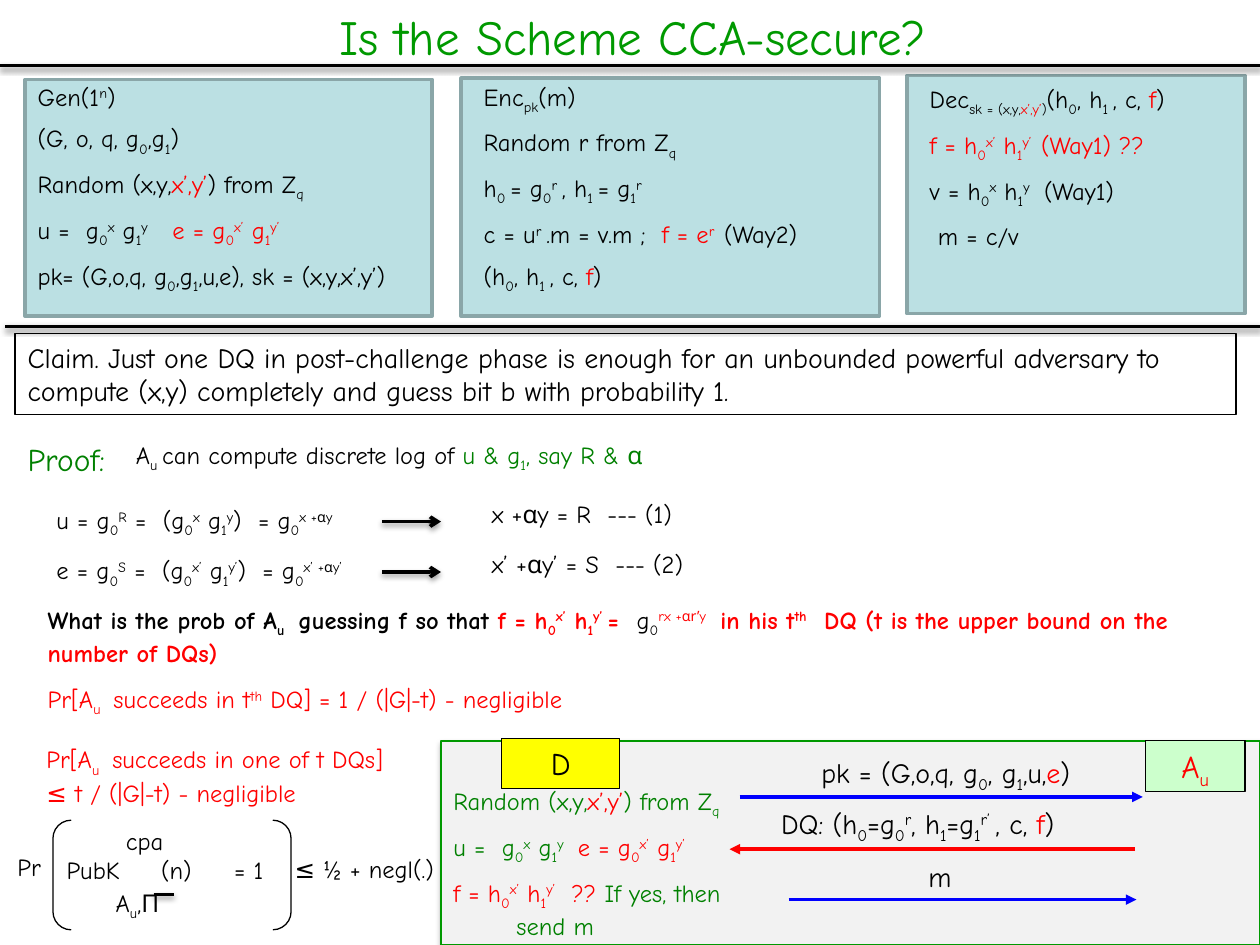
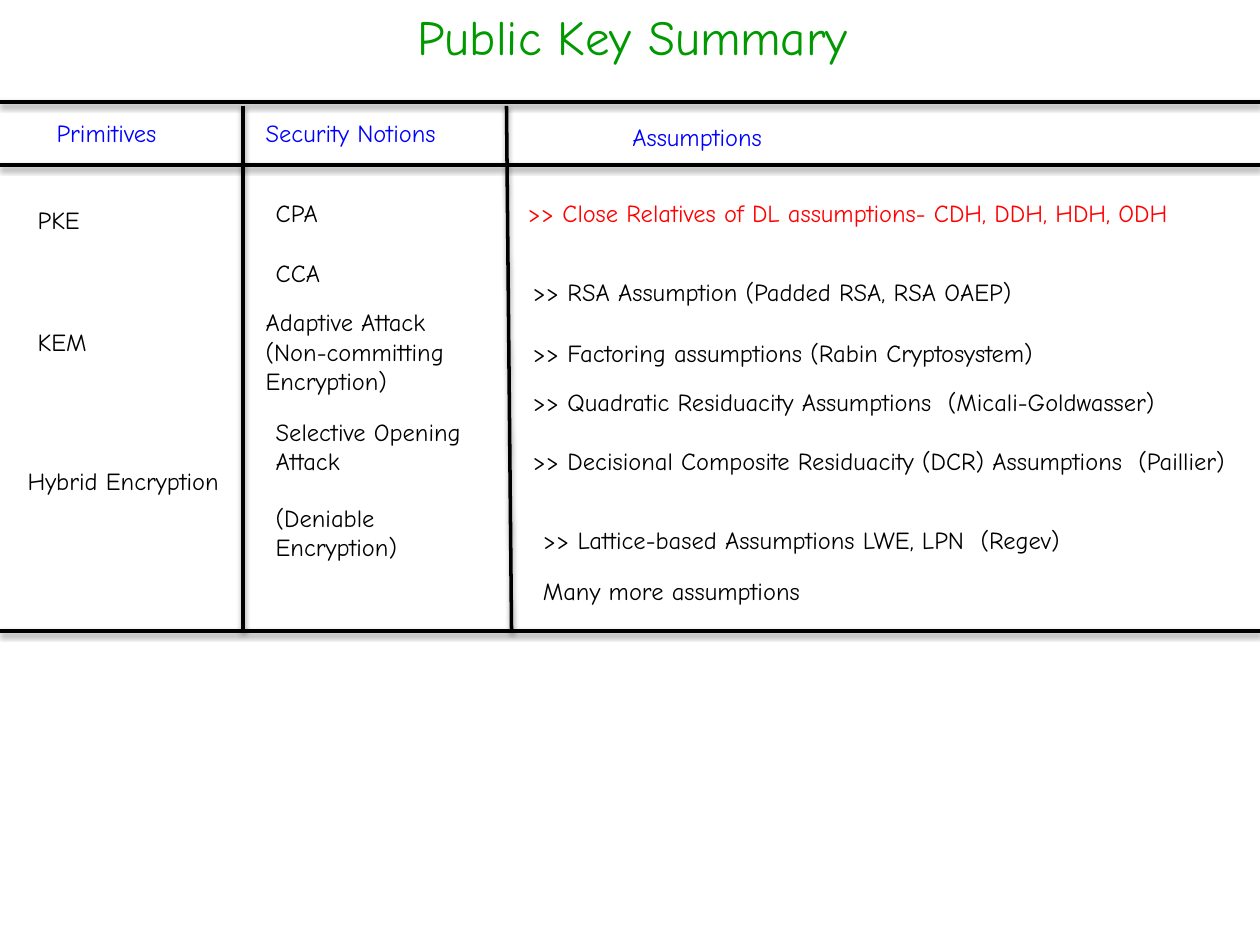
from dataclasses import dataclass

from lxml.etree import SubElement
from pptx import Presentation
from pptx.dml.color import RGBColor
from pptx.enum.shapes import MSO_CONNECTOR, MSO_SHAPE
from pptx.enum.text import MSO_ANCHOR, PP_ALIGN
from pptx.oxml.ns import qn
from pptx.util import Inches, Pt

# Shared look
FONT = "Comic Neue"
GREEK_FONT = "Noto Sans"
BLACK = RGBColor(0x00, 0x00, 0x00)
RED = RGBColor(0xFF, 0x00, 0x00)
BLUE = RGBColor(0x00, 0x00, 0xFF)
GREEN = RGBColor(0x00, 0x80, 0x00)
TITLE_GREEN = RGBColor(0x00, 0x99, 0x00)
PANEL_FILL = RGBColor(0xBB, 0xE0, 0xE3)
PANEL_EDGE = RGBColor(0x8A, 0xA6, 0xA8)
GAME_FILL = RGBColor(0xF2, 0xF2, 0xF2)
YELLOW = RGBColor(0xFF, 0xFF, 0x00)
PALE_GREEN = RGBColor(0xCC, 0xFF, 0xCC)

INK = {"black": BLACK, "red": RED, "green": GREEN}
WEIGHT = {"bold": True, "plain": False}
BASELINE = {"_": "-25000", "^": "30000"}

# The slide is a grid of 100 columns by 75 rows
SLIDE_W, SLIDE_H = Inches(10), Inches(7.5)
COLUMN, ROW = SLIDE_W / 100, SLIDE_H / 75


@dataclass
class Box:
    """An area of the slide, in columns and rows."""
    left: float
    top: float
    width: float
    height: float

    def inner(self, dx, dy, width, height):
        return Box(self.left + dx, self.top + dy, width, height)

    def emu(self):
        return (round(self.left * COLUMN), round(self.top * ROW),
                round(self.width * COLUMN), round(self.height * ROW))


PAGE = Box(0, 0, 100, 75)


# Text
def write(frame, lines, size=14, colour=BLACK, hanging=False, align=PP_ALIGN.LEFT):
    """Write lines in which {_x} is low, {^x} is high and {red} or {bold} switches the style."""
    frame.word_wrap = True
    frame.vertical_anchor = MSO_ANCHOR.TOP
    for number, line in enumerate(lines):
        paragraph = frame.add_paragraph() if number else frame.paragraphs[0]
        paragraph.alignment = align
        if hanging:
            properties = paragraph._p.get_or_add_pPr()
            properties.set("marL", str(Inches(0.5)))
            properties.set("indent", str(-Inches(0.5)))
            SubElement(properties.get_or_add_spcBef(), qn("a:spcPct"), val="50000")
        ink, bold = colour, False
        for position, piece in enumerate(line.replace("}", "{").split("{")):
            braced = position % 2
            if braced and piece in INK:
                ink = INK[piece]
            elif braced and piece in WEIGHT:
                bold = WEIGHT[piece]
            elif piece:
                shift = BASELINE.get(piece[0]) if braced else None
                run = paragraph.add_run()
                run.text = piece[1:] if shift else piece
                run.font.name = GREEK_FONT if run.text.startswith("α") else FONT
                run.font.size = Pt(size)
                run.font.bold = bold
                run.font.color.rgb = ink
                if shift:
                    run._r.get_or_add_rPr().set("baseline", shift)


def label(slide, box, *lines, **style):
    write(slide.shapes.add_textbox(*box.emu()).text_frame, lines, **style)


def add_titled_slide(deck, title):
    slide = deck.slides.add_slide(deck.slide_layouts[5])
    heading = slide.shapes.title
    heading.left, heading.top, heading.width, heading.height = PAGE.inner(0.4, 0, 99.6, 5.7).emu()
    heading.text_frame.text = title
    heading.text_frame.vertical_anchor = MSO_ANCHOR.MIDDLE
    paragraph = heading.text_frame.paragraphs[0]
    paragraph.alignment = PP_ALIGN.CENTER
    font = paragraph.runs[0].font
    font.name, font.size, font.color.rgb = FONT, Pt(28), TITLE_GREEN
    return slide


# Shapes and lines
def set_shadow(shape, alpha=None):
    """Give a soft shadow below the shape, or none at all."""
    effects = SubElement(shape._element.spPr, qn("a:effectLst"))
    if alpha:
        shadow = SubElement(effects, qn("a:outerShdw"), blurRad="40000", dist="21000",
                            dir="5400000", rotWithShape="0")
        black = SubElement(shadow, qn("a:srgbClr"), val=str(BLACK))
        SubElement(black, qn("a:alpha"), val=str(alpha * 1000))


def block(slide, box, fill=None, edge=BLACK, weight=0.75, kind=MSO_SHAPE.RECTANGLE, shadow=None):
    shape = slide.shapes.add_shape(kind, *box.emu())
    if fill is None:
        shape.fill.background()
    else:
        shape.fill.solid()
        shape.fill.fore_color.rgb = fill
    shape.line.color.rgb = edge
    shape.line.width = Pt(weight)
    set_shadow(shape, shadow)
    return shape


def line(slide, box, x1, y1, x2, y2, colour=BLACK, arrow=None, shadow=38):
    """Draw from one point of the box to another, with an optional arrowhead at the end."""
    start = box.inner(x1, y1, 0, 0).emu()
    end = box.inner(x2, y2, 0, 0).emu()
    stroke = slide.shapes.add_connector(MSO_CONNECTOR.STRAIGHT, *start[:2], *end[:2])
    stroke.line.color.rgb = colour
    stroke.line.width = Pt(2)
    if arrow:
        SubElement(stroke.line._get_or_add_ln(), qn("a:tailEnd"), type=arrow)
    set_shadow(stroke, shadow)


# Slide 1 regions
def add_algorithm(slide, box, text_dx, text_dy, steps):
    block(slide, box, PANEL_FILL, PANEL_EDGE, 2)
    label(slide, box.inner(text_dx, text_dy, box.width, 17.5), *steps, hanging=True)


def add_claim(slide, box):
    claim = block(slide, box)
    write(claim.text_frame, [
        "Claim. Just one DQ in post-challenge phase is enough for an unbounded powerful "
        "adversary to compute (x,y) completely and guess bit b with probability 1."], size=16)


def add_proof(slide, box):
    label(slide, box.inner(0, 0, 9.2, 4), "Proof:", size=18, colour=GREEN)
    label(slide, box.inner(8.6, 0, 45.3, 3.4),
          "A{_u }can compute discrete log of {green}u & g{_1}, say R & {α}")

    # Each equation of exponents implies a linear one
    equations = [
        ("u = g{_0}{^R} =  (g{_0}{^x} g{_1}{^y})  = g{_0}{^x +}{^α}{^y}",
         " x +{α}y = R  --- (1)"),
        ("e = g{_0}{^S} =  (g{_0}{^x’} g{_1}{^y’})  = g{_0}{^x’ +}{^α}{^y’}",
         " x’ +{α}y’ = S  --- (2)"),
    ]
    for number, (equation, result) in enumerate(equations):
        row = box.inner(2.3, 4.7 + 4 * number, 53, 3.4)
        label(slide, row.inner(0, 0.5, 26.6, 3.4), equation)
        line(slide, row, 26.8, 2.3, 31.5, 2.3, arrow="arrow")
        label(slide, row.inner(33.9, 0, 18.8, 3.4), result)

    # Guessing probability
    label(slide, box.inner(1.6, 13.1, 97.2, 5.7),
          "{bold}What is the prob of A{_u } guessing f so that {red}f = h{_0}{^x’} h{_1}{^y’ }=  "
          "{black}{plain}g{_0}{red}{^rx +}{^αr’}{^y   }{bold}in his t{^th}  "
          "DQ (t is the upper bound on the number of DQs)")
    label(slide, box.inner(1.6, 19.4, 48.2, 3.4),
          "Pr[A{_u } succeeds in t{^th} DQ] = 1 / (|G|-t) - negligible", colour=RED)
    label(slide, box.inner(1.5, 24.2, 31.5, 5.7),
          "Pr[A{_u } succeeds in one of t DQs]", "≤ t / (|G|-t) - negligible", colour=RED)


def add_advantage(slide, box):
    block(slide, box.inner(3.8, 0, 18.9, 8.7), kind=MSO_SHAPE.DOUBLE_BRACKET)
    for dx, dy, width, part in [
        (0, 2, 6.2, "Pr"),
        (8.6, 0, 11, "cpa"),
        (3.9, 2.3, 8, "PubK"),
        (11.4, 2.3, 6, "(n)"),
        (7.8, 4.9, 9.4, "A{_u},Π"),
        (17.2, 2.3, 6.2, "= 1"),
        (22, 2.2, 14.2, "≤ ½ + negl(.)"),
    ]:
        label(slide, box.inner(dx, dy, width, 3.4), part)
    line(slide, box, 11.8, 5.9, 13.4, 5.9)


def add_game(slide, box):
    block(slide, box, GAME_FILL, TITLE_GREEN, shadow=35)

    # Players
    for dx, dy, width, fill, player in [
        (55.9, 0, 7.9, PALE_GREEN, "{red}A{_u}"),
        (4.8, -0.2, 9.4, YELLOW, "D"),
    ]:
        badge = block(slide, box.inner(dx, dy, width, 4), fill)
        write(badge.text_frame, [player], size=18, align=PP_ALIGN.CENTER)

    # Work of D
    label(slide, box.inner(0, 3.1, 26.8, 12.8),
          "Random (x,y,{red}x’,y’{green}) from Z{_q}",
          "u =  g{_0}{^x} g{_1}{^y   }{red}e = g{_0}{^x’} g{_1}{^y’}",
          "{red}f = h{_0}{^x’} h{_1}{^y’}  ?? {green}If yes, then send m",
          colour=GREEN, hanging=True)

    # Messages
    for dx, dy, width, message, start, end, level, colour in [
        (29.2, 0.7, 24.4, "pk = (G,o,q, g{_0}, g{_1},u,{red}e{black})", 23.7, 55.7, 4.45, BLUE),
        (26, 4.7, 29.1, "DQ: (h{_0}=g{_0}{^r}, h{_1}=g{_1}{^r’ }, c, {red}f{black})",
         55.1, 22.9, 8.6, RED),
        (37.7, 8.9, 6, "m", 27.6, 55.2, 12.6, BLUE),
    ]:
        label(slide, box.inner(dx, dy, width, 3.7), message, size=16)
        line(slide, box, start, level, end, level, colour, "triangle", shadow=None)


def build_cca_slide(deck):
    slide = add_titled_slide(deck, "Is the Scheme CCA-secure?")
    add_game(slide, Box(35, 58.8, 65, 16.2))
    add_algorithm(slide, Box(36.6, 6.2, 33.2, 18.9), 0.8, -0.2, [
        "Enc{_pk}(m)",
        "Random r from Z{_q}",
        "h{_0 }= g{_0}{^r }, h{_1 }= g{_1}{^r}",
        "c = u{^r }.m = v.m ;  {red}f = e{^r  }{black}(Way2)",
        "(h{_0}, h{_1 }, c, {red}f{black})"])
    add_algorithm(slide, Box(72, 6, 26.8, 18.9), 0.8, 0.2, [
        "Dec{_sk = (x,y,}{red}{_x’,y’}{black}{_)}(h{_0}, h{_1 }, c, {red}f{black})",
        "{red}f = h{_0}{^x’} h{_1}{^y’  }(Way1) ??",
        "v = h{_0}{^x} h{_1}{^y   }(Way1)",
        " m = c/v"])
    add_algorithm(slide, Box(2, 6.3, 32.3, 18.8), 0, -0.3, [
        "Gen(1{^n})",
        "(G, o, q, g{_0},g{_1})",
        "Random (x,y,{red}x’,y’{black}) from Z{_q}",
        "u =  g{_0}{^x} g{_1}{^y}   {red}e = g{_0}{^x’} g{_1}{^y’}",
        "pk= (G,o,q, g{_0},g{_1},u,e), sk = (x,y,x’,y’)"])
    line(slide, PAGE, 0, 5.2, 100, 5.2)
    line(slide, PAGE, 0.4, 25.9, 100, 25.9)
    add_claim(slide, Box(1.2, 26.5, 96.9, 6.4))
    add_proof(slide, Box(1.2, 34.4, 98.8, 30))
    add_advantage(slide, Box(0.4, 65.1, 36.2, 8.7))


# Slide 2 regions
def add_summary_column(slide, box, heading, heading_dx, heading_dy, entries):
    label(slide, box.inner(heading_dx, heading_dy, 20.5, 3.4), heading, colour=BLUE)
    for dx, dy, width, entry in entries:
        label(slide, box.inner(dx, dy, width, 3.4), entry)


def add_summary_rules(slide, box):
    for level in (0, 5, 42):
        line(slide, box, 0, level, box.width, level)
    for top_x, bottom_x in ((19.3, 19.3), (40.2, 40.6)):
        line(slide, box, top_x, 0.3, bottom_x, box.height)


def build_summary_slide(deck):
    slide = add_titled_slide(deck, "Public Key Summary")
    grid = Box(0, 8.1, 100, 42)
    add_summary_rules(slide, grid)
    add_summary_column(slide, grid.inner(1.2, 0, 18, 42), "Primitives", 2.3, 0.8, [
        (0.8, 7.7, 7, "PKE"),
        (0.8, 17.4, 7, "KEM"),
        (0, 28.4, 18.8, "Hybrid Encryption")])
    add_summary_column(slide, grid.inner(20.1, 0, 20, 42), "Security Notions", 0, 0.8, [
        (0.8, 7.1, 7, "CPA"),
        (0.8, 11.9, 7, "CCA"),
        (0, 15.8, 19.7, "Adaptive Attack (Non-committing Encryption)"),
        (0.8, 24.5, 17.3, "Selective Opening Attack"),
        (0.8, 31.3, 17.3, "(Deniable Encryption)")])
    add_summary_column(slide, grid.inner(40.9, 0, 59, 42), "Assumptions", 8.3, 1.1, [
        (0, 7.1, 58, "{red}>> Close Relatives of DL assumptions- CDH, DDH, HDH, ODH"),
        (0.4, 13.4, 58, ">> RSA Assumption (Padded RSA, RSA OAEP)"),
        (0.4, 18.2, 58, ">> Factoring assumptions (Rabin Cryptosystem)"),
        (0.4, 22.1, 58, ">> Quadratic Residuacity Assumptions  (Micali-Goldwasser)"),
        (0.4, 26.8, 58.7, ">> Decisional Composite Residuacity (DCR) Assumptions  (Paillier)"),
        (1.2, 33.1, 56.7, ">> Lattice-based Assumptions LWE, LPN  (Regev)"),
        (1.2, 37.1, 30.7, "Many more assumptions")])


def main():
    deck = Presentation()
    deck.slide_width, deck.slide_height = SLIDE_W, SLIDE_H
    build_cca_slide(deck)
    build_summary_slide(deck)
    deck.save("out.pptx")


if __name__ == "__main__":
    main()
